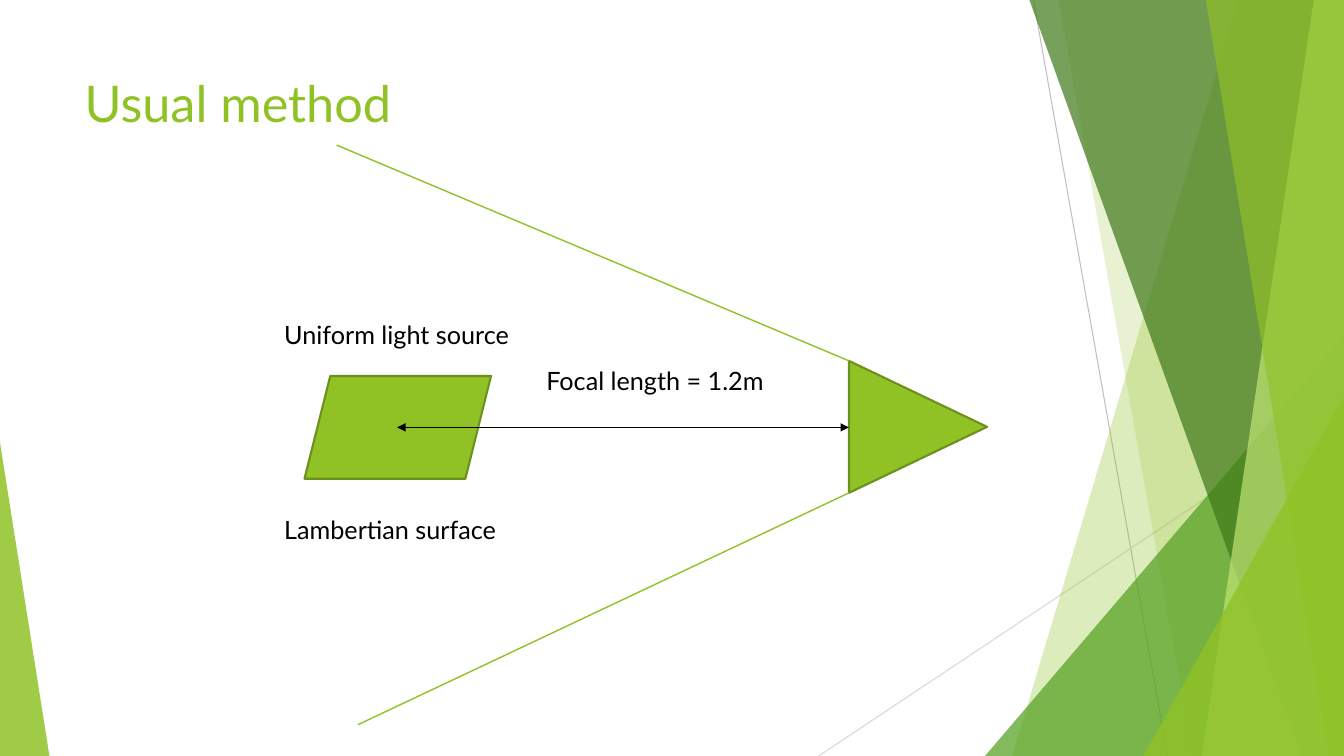
from lxml.etree import SubElement
from pptx import Presentation
from pptx.dml.color import RGBColor
from pptx.enum.shapes import MSO_CONNECTOR, MSO_SHAPE
from pptx.enum.text import MSO_ANCHOR, PP_ALIGN
from pptx.oxml.ns import qn
from pptx.util import Inches, Pt

WIDTH, HEIGHT = 13.33, 7.5
FONT = "Lato"
COLORS = {
    "lime": "90C226", "olive": "6B901C", "leaf": "54A021", "forest": "3F7819",
    "pale": "C0E474", "silver": "BFBFBF", "mist": "D9D9D9", "black": "000000",
}

deck = Presentation()
deck.slide_width, deck.slide_height = Inches(WIDTH), Inches(HEIGHT)
slide = deck.slides.add_slide(deck.slide_layouts[5])
shapes = slide.shapes


def paint(shape, color, opacity=100):
    shape.shadow.inherit = False
    shape.fill.solid()
    shape.fill.fore_color.rgb = RGBColor.from_string(COLORS[color])
    shape.line.fill.background()
    if opacity < 100:
        tint = shape.element.spPr.find(qn("a:solidFill"))[0]
        SubElement(tint, qn("a:alpha"), val=str(opacity * 1000))


def draw_line(start, end, color, weight):
    line = shapes.add_connector(
        MSO_CONNECTOR.STRAIGHT, *(Inches(v) for v in (*start, *end)))
    line.line.color.rgb = RGBColor.from_string(COLORS[color])
    line.line.width = Pt(weight)
    SubElement(line.element.spPr, qn("a:effectLst"))
    return line


# Thin background lines
draw_line((10.25, 0), (11.58, HEIGHT), "silver", 0.75)
draw_line((WIDTH, 4.03), (8.12, HEIGHT), "mist", 0.75)

# Translucent facets: bands run from a slanted edge to the right side,
# corners are right triangles standing on the bottom edge
facets = [
    ("band", 12.28, 10.04, "lime", 30),
    ("band", 10.5, 11.83, "lime", 20),
    ("corner", 9.77, 3.56, 4.17, 1, "leaf", 72),
    ("band", 10.21, 12.91, "forest", 70),
    ("band", 13.03, 11.92, "pale", 70),
    ("band", 11.96, 13.18, "lime", 65),
    ("corner", 11.34, 1.99, 3.57, 1, "lime", 80),
    ("corner", 0, 0.49, 3.11, 0, "lime", 85),
]
for kind, *geometry, color, opacity in facets:
    if kind == "band":
        top_x, bottom_x = geometry
        outline = shapes.build_freeform(Inches(top_x), 0)
        outline.add_line_segments(
            [(Inches(x), Inches(y)) for x, y in
             ((WIDTH, 0), (WIDTH, HEIGHT), (bottom_x, HEIGHT))], close=True)
        facet = outline.convert_to_shape()
    else:
        left, width, height, apex = geometry
        facet = shapes.add_shape(
            MSO_SHAPE.ISOSCELES_TRIANGLE, Inches(left), Inches(HEIGHT - height),
            Inches(width), Inches(height))
        facet.adjustments[0] = apex
    paint(facet, color, opacity)

# Title
title = shapes.title
title.left, title.top = Inches(0.74), Inches(0.67)
title.width, title.height = Inches(9.4), Inches(1.44)
title.text_frame.vertical_anchor = MSO_ANCHOR.TOP
heading = title.text_frame.paragraphs[0]
heading.alignment = PP_ALIGN.LEFT
heading_run = heading.add_run()
heading_run.text = "Usual method"
heading_run.font.size = Pt(36)
heading_run.font.name = FONT
heading_run.font.color.rgb = RGBColor.from_string(COLORS["lime"])

# Light source and camera
for preset, left, top, width, height, turn in (
    (MSO_SHAPE.PARALLELOGRAM, 3.02, 3.73, 1.85, 1.02, 180),
    (MSO_SHAPE.ISOSCELES_TRIANGLE, 8.45, 3.55, 1.31, 1.37, 90),
):
    device = shapes.add_shape(
        preset, Inches(left), Inches(top), Inches(width), Inches(height))
    device.rotation = turn
    paint(device, "lime")
    device.line.color.rgb = RGBColor.from_string(COLORS["olive"])
    device.line.width = Pt(1.5)

# Focal length arrow
camera_x, axis_y = 8.42, 4.24
focal_arrow = draw_line((3.94, axis_y), (camera_x, axis_y), "black", 1)
focal_stroke = focal_arrow.element.spPr.find(qn("a:ln"))
for end in ("a:headEnd", "a:tailEnd"):
    SubElement(focal_stroke, qn(end), type="triangle")

# Labels
for wording, left, top, width in (
    ("Focal length = 1.2m", 5.32, 3.58, 2.61),
    ("Uniform light source", 2.72, 3.12, 2.6),
    ("Lambertian surface", 2.72, 5.05, 2.58),
):
    label = shapes.add_textbox(
        Inches(left), Inches(top), Inches(width), Inches(0.4))
    label.text_frame.word_wrap = True
    label_run = label.text_frame.paragraphs[0].add_run()
    label_run.text = wording
    label_run.font.size = Pt(18)
    label_run.font.name = FONT
    label_run.font.color.rgb = RGBColor.from_string(COLORS["black"])

# Field of view
draw_line((camera_x, 3.58), (3.34, 1.44), "lime", 1)
draw_line((camera_x, 4.89), (3.55, 7.19), "lime", 1)

deck.save("out.pptx")
